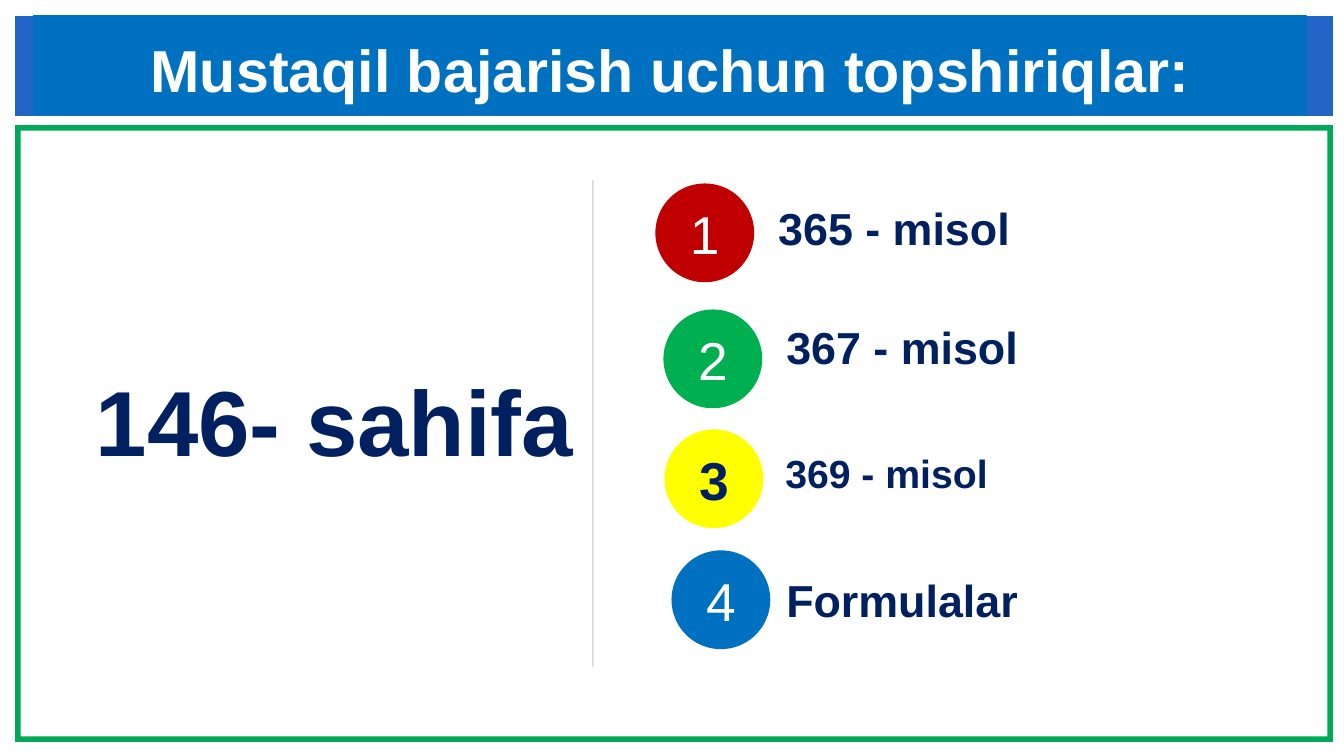
from lxml import etree
from pptx import Presentation
from pptx.dml.color import RGBColor
from pptx.enum.shapes import MSO_CONNECTOR, MSO_SHAPE
from pptx.enum.text import MSO_ANCHOR as ANCHOR, PP_ALIGN as ALIGN
from pptx.oxml.ns import qn
from pptx.util import Inches, Pt

NAVY, WHITE, BLUE = "002060", "FFFFFF", "0070C0"
BADGE = 0.98

# number, badge left, top, fill, number colour, label, label left, top, size
TASKS = [
    ("1", 6.5, 1.82, "C00000", WHITE, "365 - misol", 7.62, 1.94, 32),
    ("2", 6.58, 3.07, "00B050", WHITE, "367 - misol", 7.7, 3.12, 32),
    ("3", 6.59, 4.26, "FFFF00", NAVY, "369 - misol", 7.69, 4.41, 28),
    ("4", 6.66, 5.46, BLUE, WHITE, "Formulalar", 7.7, 5.63, 32),
]


def rgb(value):
    return RGBColor.from_string(value)


def add_filled(slide, kind, box, fill):
    sp = slide.shapes.add_shape(kind, *map(Inches, box))
    sp.shadow.inherit = False
    sp.fill.solid()
    sp.fill.fore_color.rgb = rgb(fill)
    sp.line.fill.background()
    return sp


def write(sp, text, size, color, bold=True, align=ALIGN.LEFT,
          anchor=ANCHOR.TOP, wrap=True):
    tf = sp.text_frame
    tf.word_wrap = wrap
    tf.vertical_anchor = anchor
    p = tf.paragraphs[0]
    p.alignment = align
    r = p.add_run()
    r.text = text
    r.font.name = "Arial"
    r.font.size = Pt(size)
    r.font.bold = bold
    r.font.color.rgb = rgb(color)
    return tf


def add_label(slide, box, text, size):
    sp = slide.shapes.add_textbox(*map(Inches, box))
    return write(sp, text, size, NAVY, wrap=False)


def add_header(slide, left, top, width, height):
    add_filled(slide, MSO_SHAPE.RECTANGLE, (left, top, width, height), "2365C7")
    title = add_filled(slide, MSO_SHAPE.RECTANGLE,
                       (left + 0.18, top - 0.01, width - 0.44, height), BLUE)
    tf = write(title, "Mustaqil bajarish uchun topshiriqlar:", 42.3, "FEFEFE",
               align=ALIGN.CENTER, anchor=ANCHOR.MIDDLE)
    tf.margin_left = tf.margin_right = tf.margin_bottom = 0
    tf.margin_top = Inches(0.07)


def add_frame(slide, left, top, width, height):
    frame = add_filled(slide, MSO_SHAPE.FRAME, (left, top, width, height), "00A859")
    frame.adjustments[0] = 0.055 / height


def add_divider(slide, x, top, bottom):
    line = slide.shapes.add_connector(
        MSO_CONNECTOR.STRAIGHT, *map(Inches, (x, top, x, bottom)))
    line.line.width = Pt(0.75)
    line.line.color.rgb = rgb("7F7F7F")
    color = line._element.spPr.find(".//" + qn("a:srgbClr"))
    etree.SubElement(color, qn("a:alpha"), val="50000")
    etree.SubElement(line._element.spPr, qn("a:effectLst"))


def add_task(slide, number, left, top, fill, color, label, label_left, label_top, size):
    badge = add_filled(slide, MSO_SHAPE.OVAL, (left, top, BADGE, BADGE), fill)
    write(badge, number, 38.1, color, bold=color == NAVY,
          align=ALIGN.CENTER, anchor=ANCHOR.MIDDLE)
    tf = add_label(slide, (label_left, label_top, 2.52, size / 50), label, size)
    tf.paragraphs[0].space_after = Pt(2)


def main():
    prs = Presentation()
    prs.slide_width, prs.slide_height = Inches(13.33), Inches(7.5)
    slide = prs.slides.add_slide(prs.slide_layouts[6])
    add_frame(slide, 0.15, 1.24, 13.07, 6.12)
    add_header(slide, 0.15, 0.16, 13.07, 0.99)
    add_divider(slide, 5.88, 1.79, 6.61)
    add_label(slide, (0.85, 3.56, 4.99, 1.21), "146- sahifa", 66)
    for task in TASKS:
        add_task(slide, *task)
    prs.save("out.pptx")


if __name__ == "__main__":
    main()
